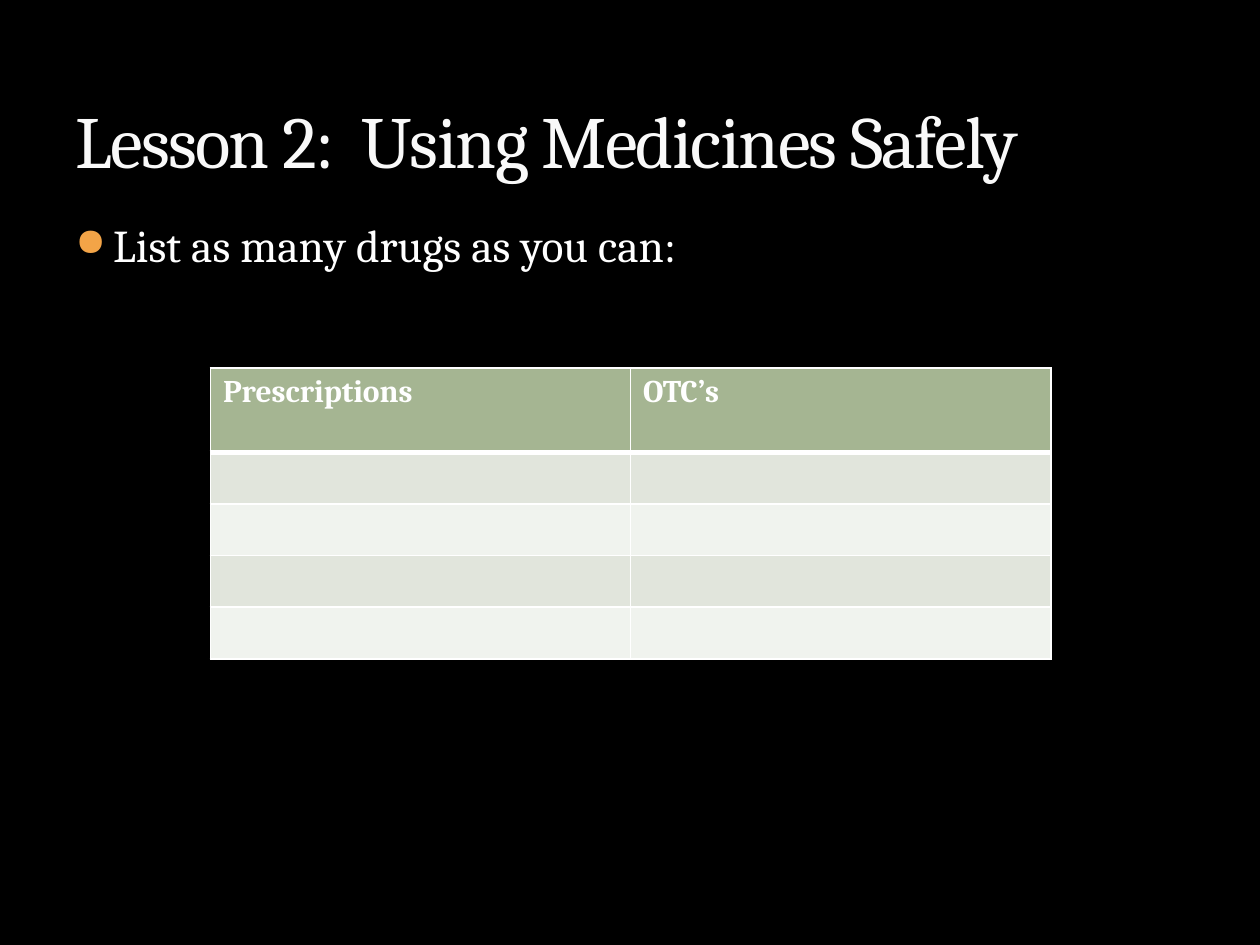
from dataclasses import dataclass

from lxml import etree
from pptx import Presentation
from pptx import util as u
from pptx.dml.color import RGBColor
from pptx.enum import text
from pptx.oxml import ns


@dataclass(frozen=True)
class Theme:
    font: str = "Cambria"
    background: str = "000000"
    title: str = "F9F9F9"
    title_outline: str = "3C4422"
    body: str = "FFFFFF"
    bullet: str = "F3A447"
    header: str = "A5B592"
    bands: tuple = ("E1E5DC", "F0F3EE")
    border: str = "FFFFFF"
    title_size: int = 42
    body_size: int = 26
    table_size: int = 18


THEME = Theme()


def paint(fill, color):
    fill.solid()
    fill.fore_color.rgb = RGBColor.from_string(color)


def add_child(parent, tag, **attributes):
    return etree.SubElement(parent, ns.qn(tag), attributes)


def make_line(tag, color, points, alpha=None):
    line = etree.Element(ns.qn(tag), w=str(u.Pt(points)))
    solid = add_child(line, "a:solidFill")
    shade = add_child(solid, "a:srgbClr", val=color)
    if alpha is not None:
        add_child(shade, "a:alpha", val=str(alpha * 1000))
    add_child(line, "a:prstDash", val="solid")
    return line


def add_span(para, words, size, color, bold=False):
    span = para.add_run()
    span.text = words
    span.font.name = THEME.font
    span.font.size = u.Pt(size)
    span.font.bold = bold
    span.font.color.rgb = RGBColor.from_string(color)
    return span


def add_box(page, left, top, width, height, anchor):
    box = page.shapes.add_textbox(
        u.Inches(left), u.Inches(top), u.Inches(width), u.Inches(height)
    )
    box.text_frame.word_wrap = True
    box.text_frame.vertical_anchor = anchor
    return box.text_frame.paragraphs[0]


def add_title(page, words):
    para = add_box(page, 0.5, 0.17, 9, 1.33, text.MSO_ANCHOR.BOTTOM)
    span = add_span(para, words, THEME.title_size, THEME.title)
    properties = span.font._element
    properties.set("spc", "-100")
    properties.insert(0, make_line("a:ln", THEME.title_outline, 0.25, alpha=25))


def add_bullet(page, words):
    para = add_box(page, 0.5, 1.67, 9, 5, text.MSO_ANCHOR.TOP)
    para.space_before = u.Pt(6)
    properties = para._p.get_or_add_pPr()
    properties.set("marL", str(u.Inches(0.3)))
    properties.set("indent", str(u.Inches(-0.3)))
    color = add_child(properties, "a:buClr")
    add_child(color, "a:srgbClr", val=THEME.bullet)
    add_child(properties, "a:buSzPct", val="85000")
    add_child(properties, "a:buChar", char="●")
    add_span(para, words, THEME.body_size, THEME.body)


def style_cell(cell, color, top=1, bottom=1):
    paint(cell.fill, color)
    properties = cell._tc.get_or_add_tcPr()
    edges = {"a:lnL": 1, "a:lnR": 1, "a:lnT": top, "a:lnB": bottom}
    for index, (tag, points) in enumerate(edges.items()):
        properties.insert(index, make_line(tag, THEME.border, points))


def add_drug_table(page, headings, blank_rows):
    heights = [0.67] + [0.41] * blank_rows
    table = page.shapes.add_table(
        len(heights), len(headings), u.Inches(1.67), u.Inches(2.92),
        u.Inches(6.67), u.Inches(sum(heights)),
    ).table
    for column in table.columns:
        column.width = u.Inches(6.67 / len(headings))
    for index, height in enumerate(heights):
        row = table.rows[index]
        row.height = u.Inches(height)
        for cell, heading in zip(row.cells, headings):
            if index == 0:
                style_cell(cell, THEME.header, bottom=3)
                para = cell.text_frame.paragraphs[0]
                add_span(para, heading, THEME.table_size, THEME.body, bold=True)
            else:
                band = THEME.bands[(index - 1) % len(THEME.bands)]
                style_cell(cell, band, top=3 if index == 1 else 1)


def main():
    deck = Presentation()
    deck.slide_width, deck.slide_height = u.Inches(10), u.Inches(7.5)
    page = deck.slides.add_slide(deck.slide_layouts[6])
    paint(page.background.fill, THEME.background)
    add_bullet(page, "List as many drugs as you can:")
    add_title(page, "Lesson 2:  Using Medicines Safely")
    add_drug_table(page, ["Prescriptions", "OTC’s"], blank_rows=4)
    deck.save("out.pptx")


if __name__ == "__main__":
    main()
